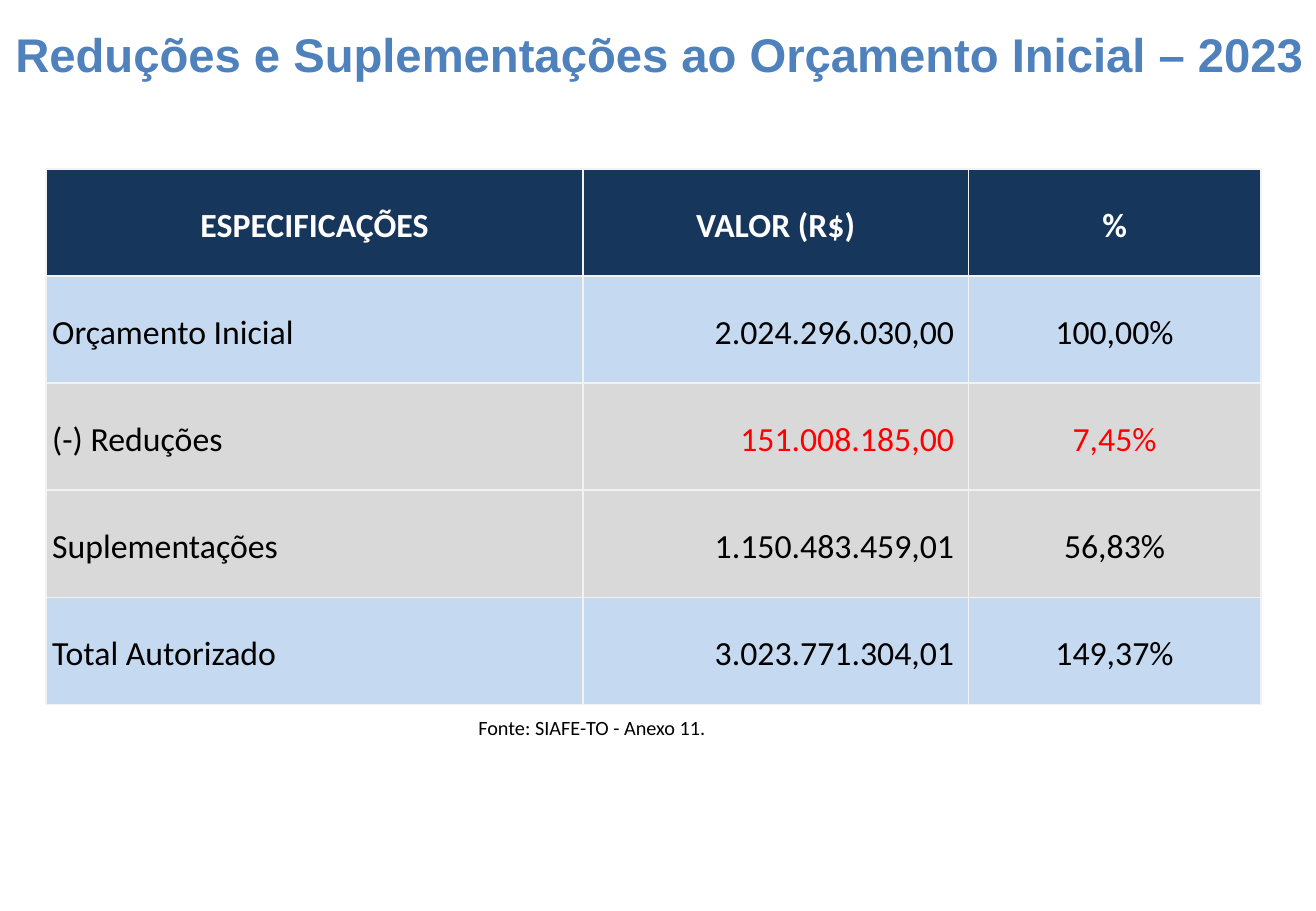
from lxml import etree
from pptx import Presentation
from pptx.dml.color import RGBColor
from pptx.enum.text import MSO_ANCHOR, MSO_AUTO_SIZE, PP_ALIGN
from pptx.oxml.ns import qn
from pptx.util import Cm, Pt

LEFT, CENTER, RIGHT = PP_ALIGN.LEFT, PP_ALIGN.CENTER, PP_ALIGN.RIGHT
MIDDLE = MSO_ANCHOR.MIDDLE
GROW = MSO_AUTO_SIZE.SHAPE_TO_FIT_TEXT

COLORS = {
    "title": "4F81BD",
    "header": "16365C",
    "total": "C5D9F1",
    "change": "D9D9D9",
    "border": "F2F2F2",
    "white": "FFFFFF",
    "black": "000000",
    "reduction": "FF0000",
}

HEADINGS = ("ESPECIFICAÇÕES", "VALOR (R$)", "%")
# Band colour, colour of the figures, then the cells of the row
BUDGET = [
    ("total", "black", ("Orçamento Inicial", "2.024.296.030,00 ", "100,00%")),
    ("change", "reduction", ("(-) Reduções", "151.008.185,00 ", "7,45%")),
    ("change", "black", ("Suplementações", "1.150.483.459,01 ", "56,83%")),
    ("total", "black", ("Total Autorizado", "3.023.771.304,01 ", "149,37%")),
]
COLUMN_WIDTHS = (11.23, 8.05, 6.12)
COLUMN_ALIGNS = (LEFT, RIGHT, CENTER)
ROW_HEIGHT = 2.24


class BudgetSlide:
    title_font = "Arial"
    body_font = "Calibri"
    table_size = 20

    def __init__(self, presentation):
        self.slide = presentation.slides.add_slide(presentation.slide_layouts[6])

    def add_text_run(self, paragraph, text, font, size, color, bold=False, align=LEFT):
        paragraph.alignment = align
        run = paragraph.add_run()
        run.text = text
        run.font.name = font
        run.font.size = Pt(size)
        run.font.bold = bold
        run.font.color.rgb = RGBColor.from_string(COLORS[color])

    def text(self, left, top, width, height, text, font, size, color,
             bold=False, align=LEFT, wrap=True):
        box = self.slide.shapes.add_textbox(Cm(left), Cm(top), Cm(width), Cm(height))
        frame = box.text_frame
        frame.word_wrap = wrap
        frame.auto_size = GROW
        self.add_text_run(frame.paragraphs[0], text, font, size, color, bold, align)

    def table(self, left, top, headings, rows):
        row_count = len(rows) + 1
        table = self.slide.shapes.add_table(
            row_count, len(headings), Cm(left), Cm(top),
            Cm(sum(COLUMN_WIDTHS)), Cm(ROW_HEIGHT * row_count)).table
        for column, width in zip(table.columns, COLUMN_WIDTHS):
            column.width = Cm(width)
        for row in table.rows:
            row.height = Cm(ROW_HEIGHT)

        for c, heading in enumerate(headings):
            self.cell(table.cell(0, c), heading, "header", "white", CENTER, bold=True)
        for r, (band, figure_color, values) in enumerate(rows, start=1):
            for c, value in enumerate(values):
                color = figure_color if c else "black"
                self.cell(table.cell(r, c), value, band, color, COLUMN_ALIGNS[c])

    def cell(self, cell, text, fill, color, align, bold=False):
        cell.vertical_anchor = MIDDLE
        cell.margin_left = cell.margin_right = Cm(0.13)
        cell.margin_top = cell.margin_bottom = 0
        paragraph = cell.text_frame.paragraphs[0]
        paragraph.line_spacing = 1.15
        self.add_text_run(paragraph, text, self.body_font, self.table_size,
                          color, bold, align)
        self.borders(cell)
        cell.fill.solid()
        cell.fill.fore_color.rgb = RGBColor.from_string(COLORS[fill])

    def borders(self, cell):
        """Line all four sides; must precede the fill in the cell properties."""
        properties = cell._tc.get_or_add_tcPr()
        for side in ("lnL", "lnR", "lnT", "lnB"):
            line = etree.SubElement(properties, qn(f"a:{side}"), w=str(Pt(1)))
            solid = etree.SubElement(line, qn("a:solidFill"))
            etree.SubElement(solid, qn("a:srgbClr"), val=COLORS["border"])


def main():
    presentation = Presentation()
    presentation.slide_width = Cm(27.51)
    presentation.slide_height = Cm(19.05)

    budget = BudgetSlide(presentation)
    budget.text(0, 0.41, 27.56, 1.45,
                "Reduções e Suplementações ao Orçamento Inicial – 2023",
                budget.title_font, 28, "title", bold=True, align=CENTER)
    budget.table(0.96, 3.53, HEADINGS, BUDGET)
    budget.text(9.75, 14.83, 5.33, 0.76, "Fonte: SIAFE-TO - Anexo 11.",
                budget.body_font, 12, "black", wrap=False)

    presentation.save("out.pptx")


if __name__ == "__main__":
    main()
